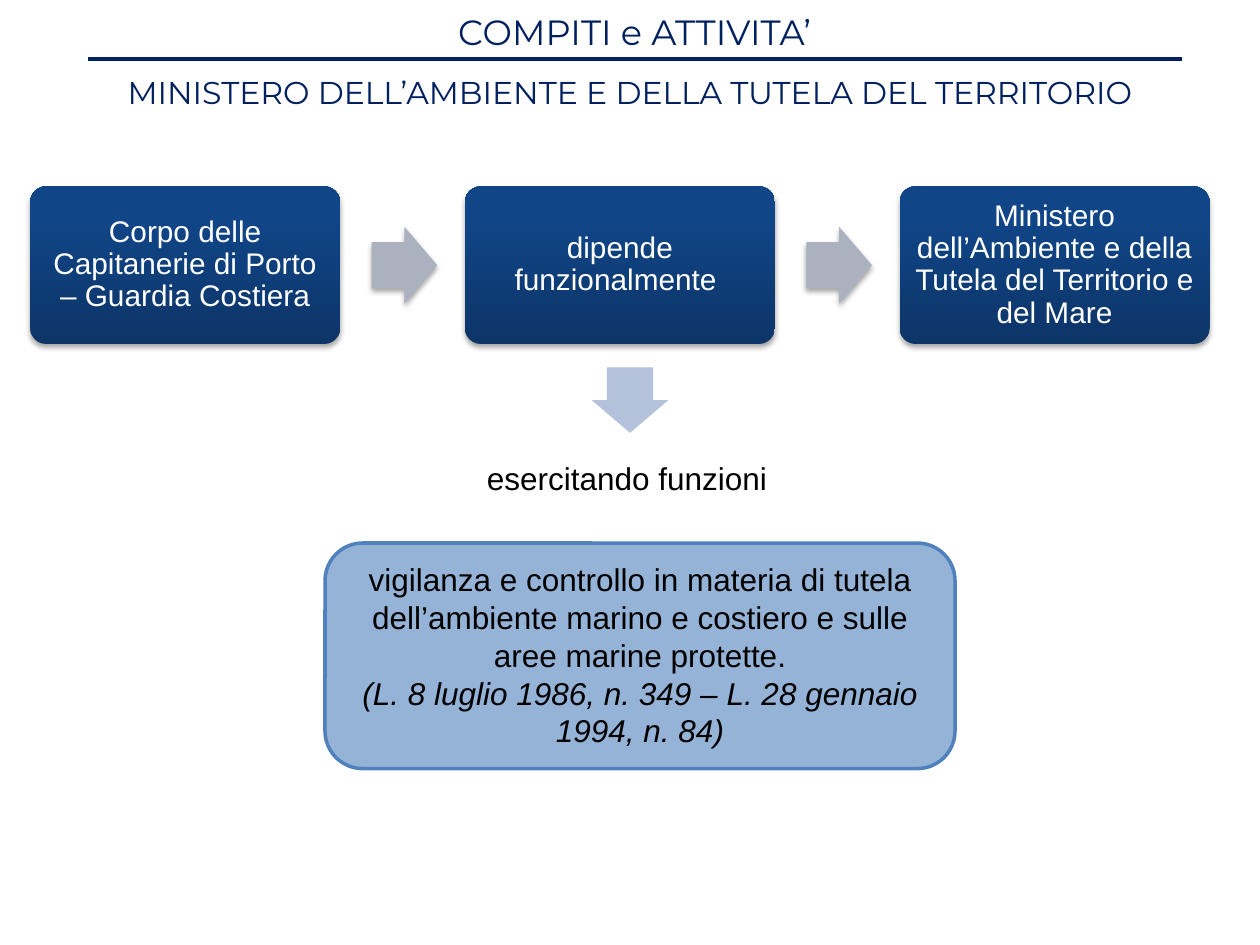
import copy
from dataclasses import dataclass

import lxml.etree
import pptx
import pptx.dml.color
import pptx.enum.shapes
import pptx.enum.text
import pptx.oxml
import pptx.oxml.ns
import pptx.util
from pptx.shapes.autoshape import Shape
from pptx.slide import Slide
from pptx.util import Inches

RGBColor = pptx.dml.color.RGBColor
MSO_SHAPE = pptx.enum.shapes.MSO_SHAPE
PP_ALIGN = pptx.enum.text.PP_ALIGN
MSO_ANCHOR = pptx.enum.text.MSO_ANCHOR
MSO_AUTO_SIZE = pptx.enum.text.MSO_AUTO_SIZE
Pt = pptx.util.Pt
qn = pptx.oxml.ns.qn

NAVY = RGBColor(0x00, 0x20, 0x60)
WHITE = RGBColor(0xFF, 0xFF, 0xFF)
BLACK = RGBColor(0x00, 0x00, 0x00)
PALE_BLUE = RGBColor(0x95, 0xB3, 0xD7)
MID_BLUE = RGBColor(0x4F, 0x81, 0xBD)
ARROW_GREY = RGBColor(0xAC, 0xB1, 0xBF)
ARROW_BLUE = RGBColor(0xB3, 0xC1, 0xDB)
STEP_GRADIENT = (
    (0, RGBColor(0x0D, 0x35, 0x68)),
    (0.8, RGBColor(0x10, 0x45, 0x87)),
    (1, RGBColor(0x0E, 0x45, 0x8A)),
)

STEP_LEFT, STEP_TOP, STEP_WIDTH, STEP_HEIGHT = 0.24, 1.48, 2.46, 1.25
STEP_PITCH = 3.45
ARROW_OFFSET = 2.71
STEPS = (
    "Corpo delle Capitanerie di Porto – Guardia Costiera",
    "dipende funzionalmente ",
    "Ministero dell’Ambiente e della Tutela del Territorio e del Mare",
)

SHADOW = (
    f'<a:outerShdw {pptx.oxml.ns.nsdecls("a")} blurRad="39370" dist="22860" '
    'dir="5400000" rotWithShape="0"><a:srgbClr val="000000">'
    '<a:alpha val="35000"/></a:srgbClr></a:outerShdw>'
)


@dataclass(frozen=True)
class Line:
    text: str
    size: float
    color: RGBColor
    font: str = "Arial"
    italic: bool = False
    spacing: float = 1.0
    before: float = 0


@dataclass(frozen=True)
class Arrow:
    left: float
    top: float
    color: RGBColor
    rotation: float = 0
    shadow: bool = True


def set_format(target: object, values: dict) -> None:
    for name, value in values.items():
        setattr(target, name, value)


def write_lines(shape: Shape, lines: list[Line], frame_format: dict) -> None:
    frame = shape.text_frame
    set_format(frame, frame_format)
    for index, line in enumerate(lines):
        paragraph = frame.paragraphs[0] if index == 0 else frame.add_paragraph()
        set_format(paragraph, {
            "alignment": PP_ALIGN.CENTER,
            "line_spacing": line.spacing,
            "space_before": Pt(line.before),
        })
        run = paragraph.add_run()
        run.text = line.text
        set_format(run.font, {
            "name": line.font, "size": Pt(line.size), "italic": line.italic,
        })
        run.font.color.rgb = line.color


def add_shadow(shape: Shape) -> None:
    effects = shape.element.spPr.find(qn("a:effectLst"))
    effects.append(pptx.oxml.parse_xml(SHADOW))


def add_step(slide: Slide, left: float, text: str) -> None:
    step = slide.shapes.add_shape(
        MSO_SHAPE.ROUNDED_RECTANGLE, Inches(left), Inches(STEP_TOP),
        Inches(STEP_WIDTH), Inches(STEP_HEIGHT))
    step.adjustments[0] = 0.1
    step.fill.gradient()
    step.fill.gradient_angle = 90
    stop_list = step.element.spPr.find(".//" + qn("a:gsLst"))
    stop_list.append(copy.deepcopy(stop_list[-1]))
    for stop, (position, color) in zip(step.fill.gradient_stops, STEP_GRADIENT):
        stop.position = position
        stop.color.rgb = color
    step.line.fill.background()
    step.shadow.inherit = False
    add_shadow(step)
    margins = {f"margin_{side}": Inches(0.07)
               for side in ("left", "top", "right", "bottom")}
    write_lines(step, [Line(text, 17, WHITE, spacing=0.9)],
                {"word_wrap": True, "vertical_anchor": MSO_ANCHOR.MIDDLE, **margins})


def add_arrow(slide: Slide, arrow: Arrow) -> None:
    shape = slide.shapes.add_shape(
        MSO_SHAPE.RIGHT_ARROW, Inches(arrow.left), Inches(arrow.top),
        Inches(0.52), Inches(0.61))
    shape.adjustments[0] = 0.6
    shape.adjustments[1] = 0.5
    shape.rotation = arrow.rotation
    shape.fill.solid()
    shape.fill.fore_color.rgb = arrow.color
    shape.line.fill.background()
    shape.shadow.inherit = False
    if arrow.shadow:
        add_shadow(shape)


def add_heading(slide: Slide) -> None:
    title = slide.shapes.title
    set_format(title, {"left": Inches(0), "top": Inches(0.23),
                       "width": Inches(10), "height": Inches(0.5)})
    write_lines(title, [
        Line(" COMPITI e ATTIVITA’", 20, NAVY, "Montserrat"),
        Line("MINISTERO DELL’AMBIENTE E DELLA TUTELA DEL TERRITORIO", 18, NAVY,
             "Montserrat", before=12),
    ], {"word_wrap": False, "auto_size": MSO_AUTO_SIZE.NONE,
        "vertical_anchor": MSO_ANCHOR.MIDDLE})
    rule = slide.shapes.add_connector(
        pptx.enum.shapes.MSO_CONNECTOR.STRAIGHT,
        Inches(0.7), Inches(0.47), Inches(9.38), Inches(0.47))
    rule.line.color.rgb = NAVY
    rule.line.width = Pt(2.25)
    lxml.etree.SubElement(rule.element.spPr, qn("a:effectLst"))


def add_functions(slide: Slide) -> None:
    label = slide.shapes.add_textbox(
        Inches(3.75), Inches(3.59), Inches(2.52), Inches(0.4))
    write_lines(label, [Line("esercitando funzioni ", 18, BLACK)],
                {"word_wrap": False})
    panel = slide.shapes.add_shape(
        MSO_SHAPE.ROUNDED_RECTANGLE, Inches(2.58), Inches(4.31),
        Inches(5), Inches(1.79))
    panel.fill.solid()
    panel.fill.fore_color.rgb = PALE_BLUE
    panel.line.color.rgb = MID_BLUE
    panel.line.width = Pt(2)
    panel.shadow.inherit = False
    write_lines(panel, [
        Line("vigilanza e controllo in materia di tutela dell’ambiente marino "
             "e costiero e sulle aree marine protette.", 18, BLACK),
        Line("(L. 8 luglio 1986, n. 349 – L. 28 gennaio 1994, n. 84)", 18, BLACK,
             italic=True),
    ], {"word_wrap": True, "vertical_anchor": MSO_ANCHOR.TOP})


def main() -> None:
    presentation = pptx.Presentation()
    presentation.slide_width = Inches(10)
    presentation.slide_height = Inches(7.5)
    slide = presentation.slides.add_slide(presentation.slide_layouts[5])
    add_heading(slide)
    for index, text in enumerate(STEPS):
        left = STEP_LEFT + index * STEP_PITCH
        add_step(slide, left, text)
        if index < len(STEPS) - 1:
            add_arrow(slide, Arrow(left + ARROW_OFFSET, 1.8, ARROW_GREY))
    add_arrow(slide, Arrow(4.74, 2.87, ARROW_BLUE, rotation=90, shadow=False))
    add_functions(slide)
    presentation.save("out.pptx")


if __name__ == "__main__":
    main()
